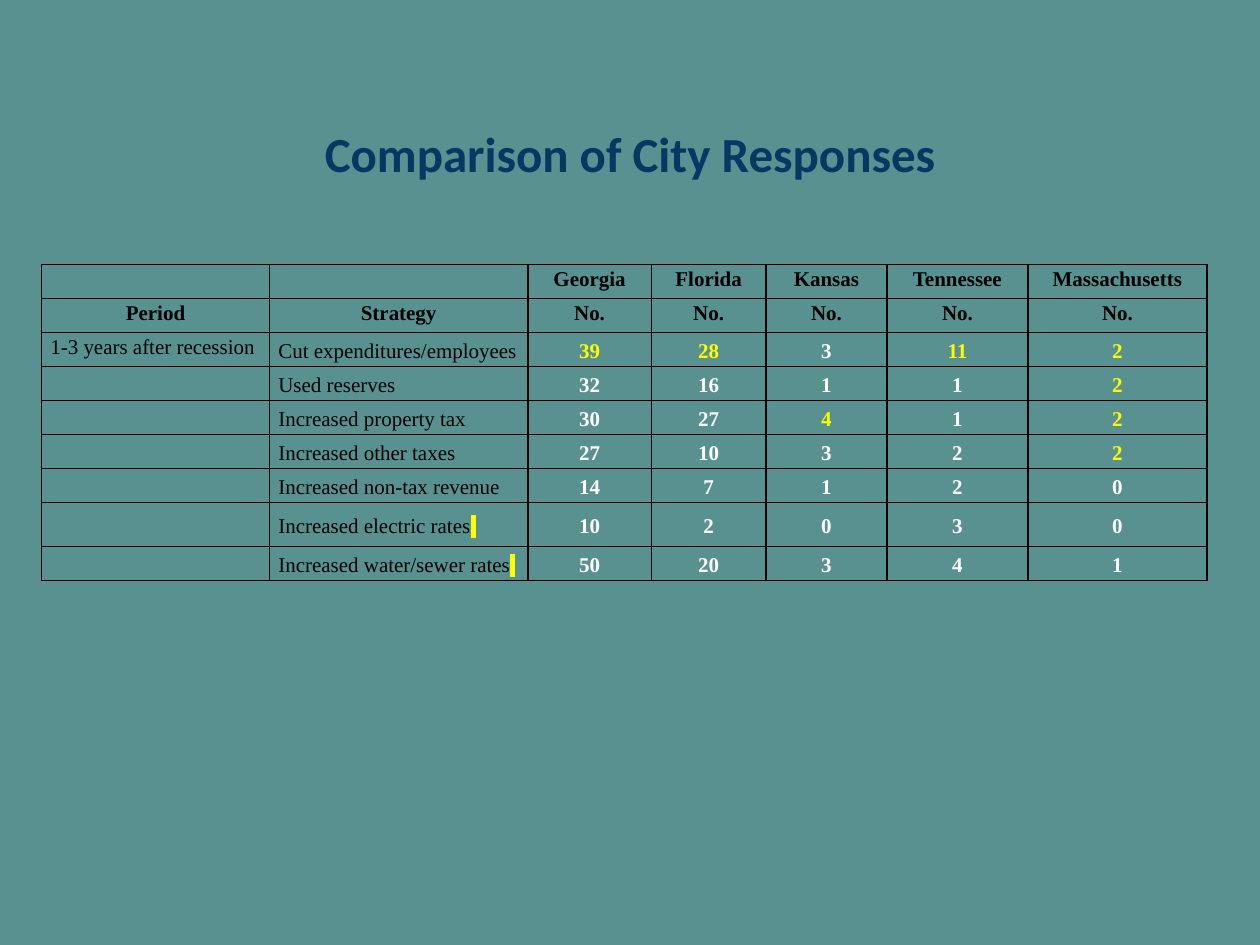
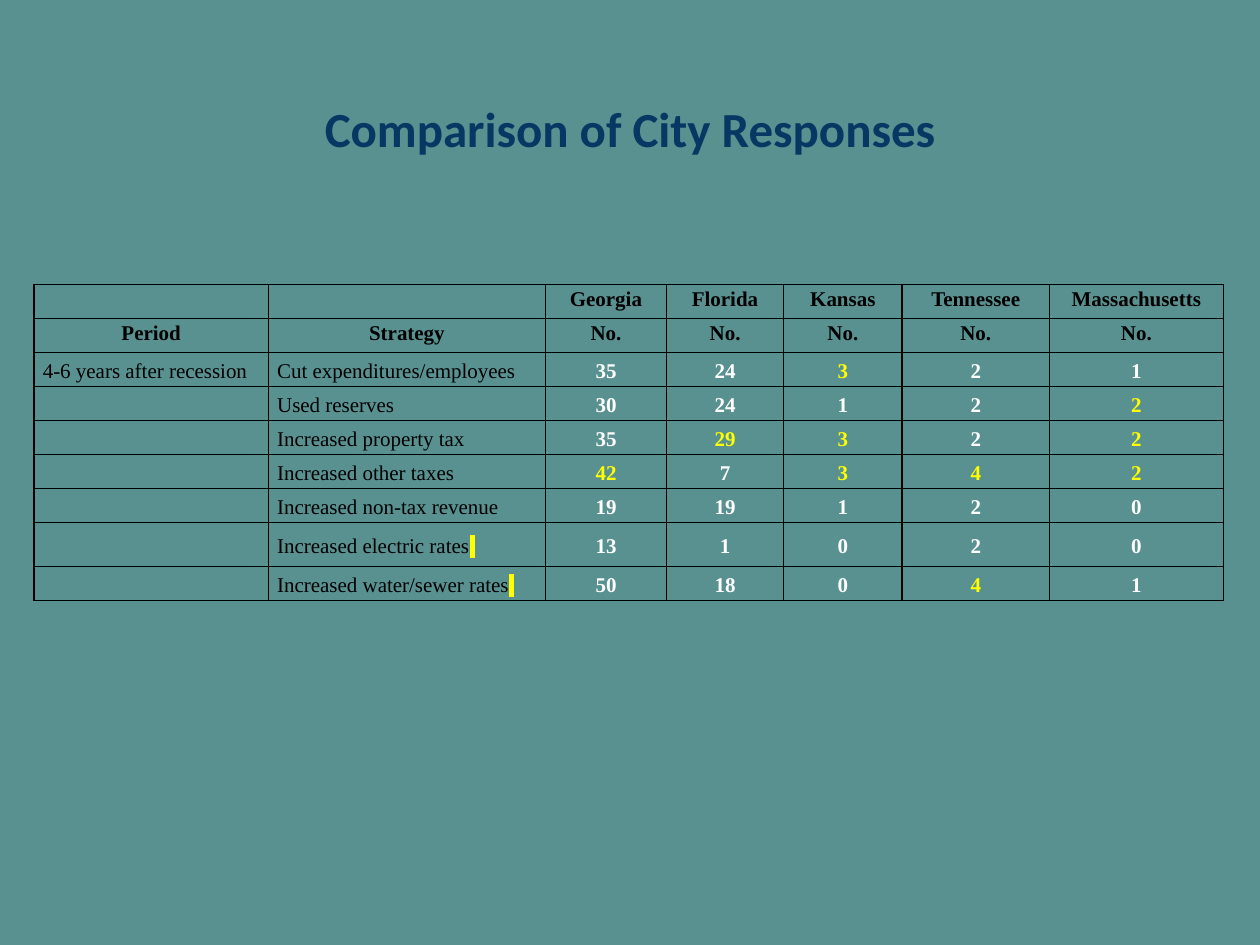
from dataclasses import dataclass

import pptx
import pptx.dml.color
import pptx.enum.text
import pptx.oxml.ns
import pptx.util
from lxml import etree
from pptx.util import Inches

COLORS = {
    "background": "599191",
    "title": "073763",
    "label": "000000",
    "value": "FFFFFF",
    "top": "FFFF00",
    "border": "000000",
}
TITLE = "Comparison of City Responses"
TITLE_FONT = "Calibri"
TABLE_FONT = "Times New Roman"
STATES = ["Georgia", "Florida", "Kansas", "Tennessee", "Massachusetts"]
STRATEGIES = [
    "Cut expenditures/employees",
    "Used reserves",
    "Increased property tax",
    "Increased other taxes",
    "Increased non-tax revenue",
    "Increased electric rates",
    "Increased water/sewer rates",
]
MARKED_STRATEGIES = STRATEGIES[-2:]
HEADER_ROWS = [["", "", *STATES], ["Period", "Strategy"] + ["No."] * len(STATES)]
ROW_HEIGHTS = [0.27] * 7 + [0.35, 0.27]

CENTER = pptx.enum.text.PP_ALIGN.CENTER
LEFT = pptx.enum.text.PP_ALIGN.LEFT
TOP = pptx.enum.text.MSO_ANCHOR.TOP
MIDDLE = pptx.enum.text.MSO_ANCHOR.MIDDLE


@dataclass(frozen=True)
class TextStyle:
    font: str
    size: int
    color: str
    bold: bool


@dataclass(frozen=True)
class PeriodSlide:
    period: str
    period_anchor: pptx.enum.text.MSO_ANCHOR
    title_top: float
    table_left: float
    table_top: float
    column_widths: list[float]
    counts: list[list[int]]


TITLE_STYLE = TextStyle(TITLE_FONT, 28, "title", True)
HEADER_STYLE = TextStyle(TABLE_FONT, 12, "label", True)
LABEL_STYLE = TextStyle(TABLE_FONT, 12, "label", False)
VALUE_STYLE = TextStyle(TABLE_FONT, 12, "value", True)
TOP_STYLE = TextStyle(TABLE_FONT, 12, "top", True)

PERIOD_SLIDES = [
    PeriodSlide(
        "1-3 years after recession", TOP, 0.81, 0.33, 2.1,
        [1.81, 2.05, 0.98, 0.91, 0.96, 1.12, 1.42],
        [
            [39, 28, 3, 11, 2],
            [32, 16, 1, 1, 2],
            [30, 27, 4, 1, 2],
            [27, 10, 3, 2, 2],
            [14, 7, 1, 2, 0],
            [10, 2, 0, 3, 0],
            [50, 20, 3, 4, 1],
        ],
    ),
    PeriodSlide(
        "4-6 years after recession", MIDDLE, 0.61, 0.27, 2.26,
        [1.86, 2.2, 0.96, 0.93, 0.94, 1.17, 1.38],
        [
            [35, 24, 3, 2, 1],
            [30, 24, 1, 2, 2],
            [35, 29, 3, 2, 2],
            [42, 7, 3, 4, 2],
            [19, 19, 1, 2, 0],
            [13, 1, 0, 2, 0],
            [50, 18, 0, 4, 1],
        ],
    ),
]


def rgb(name: str) -> pptx.dml.color.RGBColor:
    return pptx.dml.color.RGBColor.from_string(COLORS[name])


def add_color(parent: etree._Element, name: str) -> None:
    etree.SubElement(parent, pptx.oxml.ns.qn("a:srgbClr"), val=COLORS[name])


def add_run(paragraph, text: str, style: TextStyle):
    run = paragraph.add_run()
    run.text = text
    run.font.name = style.font
    run.font.size = pptx.util.Pt(style.size)
    run.font.bold = style.bold
    run.font.color.rgb = rgb(style.color)
    return run


def add_marker(paragraph) -> None:
    run = add_run(paragraph, " ", LABEL_STYLE)
    highlight = etree.Element(pptx.oxml.ns.qn("a:highlight"))
    add_color(highlight, "top")
    run.font._element.find(pptx.oxml.ns.qn("a:solidFill")).addnext(highlight)


def add_title(slide, top: float) -> None:
    shape = slide.shapes.add_textbox(Inches(0.5), Inches(top), Inches(9), Inches(0.81))
    frame = shape.text_frame
    frame.word_wrap = True
    frame.vertical_anchor = MIDDLE
    paragraph = frame.paragraphs[0]
    paragraph.alignment = CENTER
    add_run(paragraph, TITLE, TITLE_STYLE)


def set_borders(cell) -> None:
    properties = cell._tc.get_or_add_tcPr()
    for index, side in enumerate(("lnL", "lnR", "lnT", "lnB")):
        line = etree.Element(pptx.oxml.ns.qn(f"a:{side}"), w=str(pptx.util.Pt(1)))
        add_color(etree.SubElement(line, pptx.oxml.ns.qn("a:solidFill")), "border")
        properties.insert(index, line)


def fill_cell(cell, text: str, style: TextStyle, alignment, anchor) -> None:
    cell.fill.background()
    cell.margin_left = cell.margin_right = Inches(0.07)
    cell.margin_top = cell.margin_bottom = 0
    cell.vertical_anchor = anchor
    set_borders(cell)
    paragraph = cell.text_frame.paragraphs[0]
    paragraph.alignment = alignment
    paragraph.line_spacing = 1.15
    if text:
        add_run(paragraph, text, style)
    else:
        etree.SubElement(
            paragraph._p, pptx.oxml.ns.qn("a:endParaRPr"), sz=str(style.size * 100)
        )
    if text in MARKED_STRATEGIES:
        add_marker(paragraph)


def add_response_table(slide, content: PeriodSlide) -> None:
    table = slide.shapes.add_table(
        len(ROW_HEIGHTS),
        len(content.column_widths),
        Inches(content.table_left),
        Inches(content.table_top),
        Inches(sum(content.column_widths)),
        Inches(sum(ROW_HEIGHTS)),
    ).table
    table.first_row = table.horz_banding = False
    for column, width in zip(table.columns, content.column_widths):
        column.width = Inches(width)
    for row, height in zip(table.rows, ROW_HEIGHTS):
        row.height = Inches(height)

    for row_index, header in enumerate(HEADER_ROWS):
        for column_index, text in enumerate(header):
            fill_cell(table.cell(row_index, column_index), text, HEADER_STYLE, CENTER, TOP)

    top_counts = [max(column) for column in zip(*content.counts[:-1])]
    rows = zip(STRATEGIES, content.counts)
    for row_index, (strategy, counts) in enumerate(rows, len(HEADER_ROWS)):
        period = content.period if row_index == len(HEADER_ROWS) else ""
        fill_cell(table.cell(row_index, 0), period, LABEL_STYLE, LEFT, content.period_anchor)
        fill_cell(table.cell(row_index, 1), strategy, LABEL_STYLE, LEFT, MIDDLE)
        for column_index, (count, top_count) in enumerate(zip(counts, top_counts), 2):
            style = TOP_STYLE if count == top_count else VALUE_STYLE
            fill_cell(table.cell(row_index, column_index), str(count), style, CENTER, MIDDLE)


def add_period_slide(presentation, content: PeriodSlide) -> None:
    slide = presentation.slides.add_slide(presentation.slide_layouts[6])
    slide.background.fill.solid()
    slide.background.fill.fore_color.rgb = rgb("background")
    add_title(slide, content.title_top)
    add_response_table(slide, content)


def main() -> None:
    presentation = pptx.Presentation()
    presentation.slide_width = Inches(10)
    presentation.slide_height = Inches(7.5)
    for content in PERIOD_SLIDES:
        add_period_slide(presentation, content)
    presentation.save("out.pptx")


if __name__ == "__main__":
    main()
